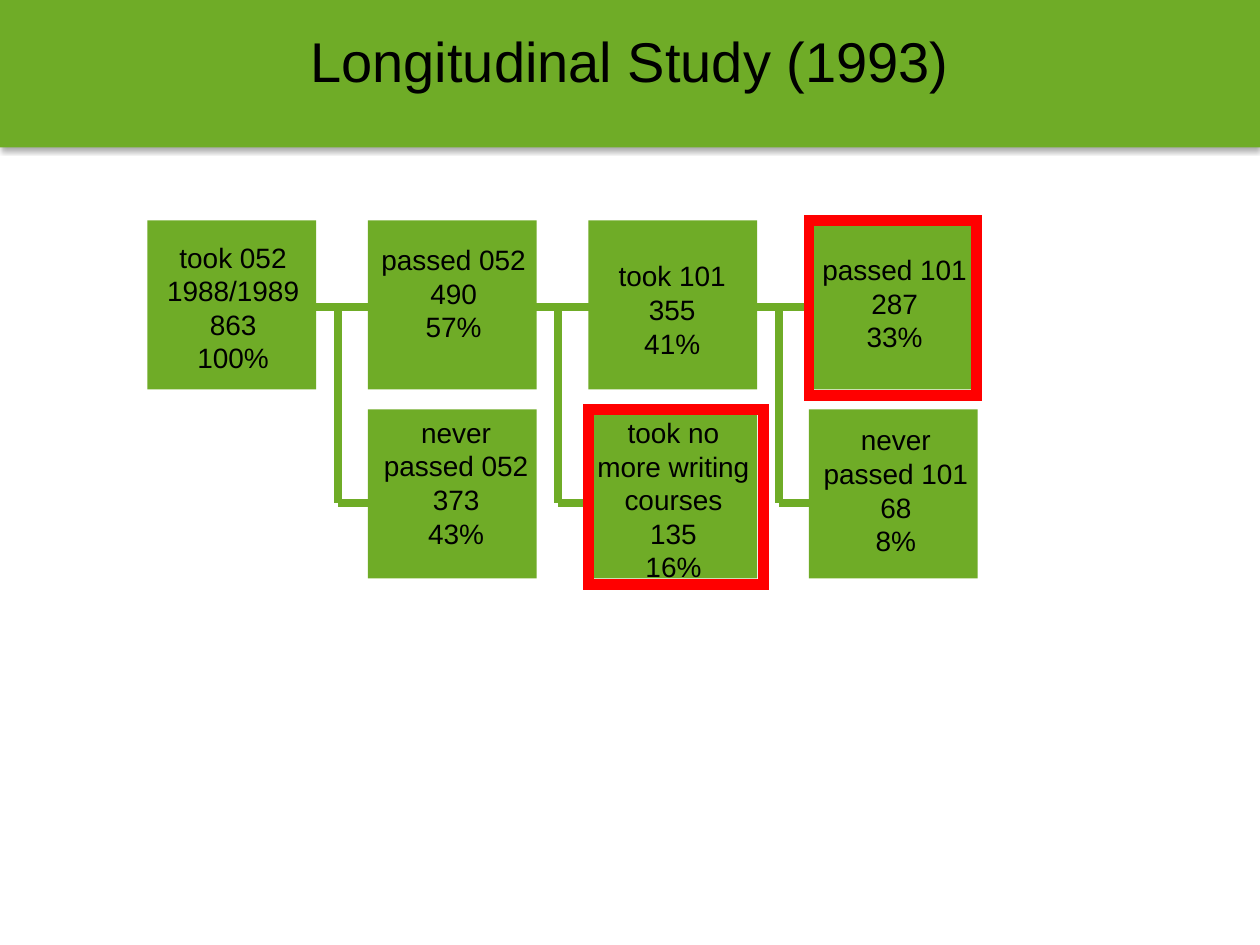
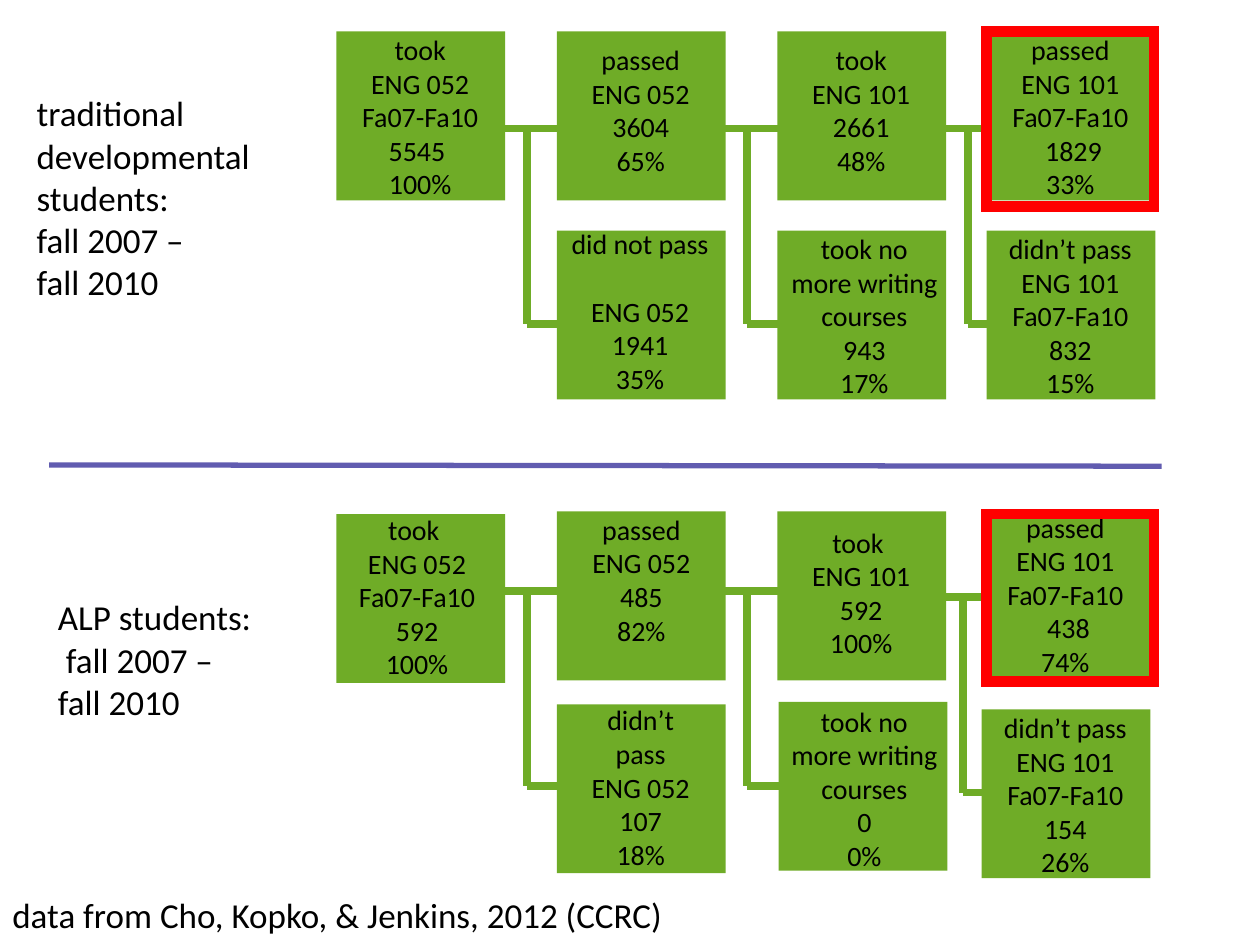
from pptx import Presentation
from pptx.dml.color import RGBColor
from pptx.enum.shapes import MSO_CONNECTOR as Connector, MSO_SHAPE as Shape
from pptx.enum.text import MSO_ANCHOR as Anchor, PP_ALIGN as Align
from pptx.oxml import parse_xml
from pptx.oxml.ns import nsdecls, qn
from pptx.util import Inches, Pt
from lxml.etree import SubElement

COLORS = {"green": "6FAC27", "red": "FF0000", "violet": "615CB0",
          "black": "000000", "white": "FFFFFF"}
BOX_SIDE = 1.34
LINE_HEIGHT = 0.27

# Each stage: box left, box top, label left, label top, label width, lines
STUDY_1993 = [
    (1.17, 1.75, 1.17, 1.86, 1.36, ["took 052", "1988/1989", "863", "100%"]),
    (2.92, 1.75, 2.92, 1.88, 1.36, ["passed 052", "490", "57%"]),
    (2.92, 3.25, 3.00, 3.25, 1.24, ["never", "passed 052", "373", "43%"]),
    (4.67, 1.75, 4.86, 2.01, 0.95, ["took 101", "355", "41%"]),
    (4.67, 3.25, 4.68, 3.25, 1.33,
     ["took no", "more writing", "courses", "135", "16%"]),
    (6.42, 1.75, 6.45, 1.96, 1.30, ["passed 101", "287", "33%"]),
    (6.42, 3.25, 6.49, 3.31, 1.24, ["never", "passed 101", "68", "8%"]),
]
TRADITIONAL = [
    (2.67, 0.25, 2.67, 0.25, 1.33,
     ["took", "ENG 052", "Fa07-Fa10", "5545 ", "100%"]),
    (4.42, 0.25, 4.42, 0.33, 1.33, ["passed", "ENG 052", "3604", "65%"]),
    (4.42, 1.83, 4.42, 1.79, 1.32, ["did not pass", "ENG 052", "1941", "35%"]),
    (6.17, 0.25, 6.17, 0.33, 1.33, ["took", "ENG 101", "2661", "48%"]),
    (6.17, 1.83, 6.25, 1.83, 1.22,
     ["took no", "more writing", "courses", "943", "17%"]),
    (7.83, 0.25, 7.83, 0.25, 1.33,
     ["passed", "ENG 101", "Fa07-Fa10", " 1829", "33%"]),
    (7.83, 1.83, 7.83, 1.83, 1.33,
     ["didn’t pass", "ENG 101", "Fa07-Fa10", "832", "15%"]),
]
ALP = [
    (2.67, 4.08, 2.76, 4.06, 1.10,
     ["took ", "ENG 052", "Fa07-Fa10", "592", "100%"]),
    (4.42, 4.06, 4.63, 4.06, 0.92, ["passed", "ENG 052", "485", "82%"]),
    (4.42, 5.59, 4.42, 5.57, 1.33, ["didn’t", "pass", "ENG 052", "107", "18%"]),
    (6.17, 4.06, 6.17, 4.16, 1.33, ["took ", "ENG 101", "592", "100%"]),
    (6.18, 5.57, 6.25, 5.58, 1.22,
     ["took no", "more writing", "courses", "0", "0%"]),
    (7.79, 4.04, 7.79, 4.04, 1.33,
     ["passed", "ENG 101", "Fa07-Fa10", " 438", "74%"]),
    (7.79, 5.63, 7.79, 5.63, 1.33,
     ["didn’t pass", "ENG 101", "Fa07-Fa10", "154", "26%"]),
]


def color(name):
    return RGBColor.from_string(COLORS[name])


def add_slide(deck):
    slide = deck.slides.add_slide(deck.slide_layouts[6])
    slide.background.fill.solid()
    slide.background.fill.fore_color.rgb = color("white")
    return slide


def add_box(slide, left, top, width=BOX_SIDE, height=BOX_SIDE):
    box = slide.shapes.add_shape(Shape.RECTANGLE, Inches(left), Inches(top),
                                 Inches(width), Inches(height))
    box.shadow.inherit = False
    box.fill.solid()
    box.fill.fore_color.rgb = color("green")
    box.line.fill.background()
    return box


def add_highlight(slide, left, top, width, height):
    """Unfilled red frame with square corners."""
    frame = add_box(slide, left, top, width, height)
    frame.fill.background()
    frame.line.color.rgb = color("red")
    frame.line.width = Pt(6)
    SubElement(frame.line._get_or_add_ln(), qn("a:miter"), lim="800000")


def add_line(slide, start, end, name="green", points=4.5):
    line = slide.shapes.add_connector(Connector.STRAIGHT,
                                      *map(Inches, (*start, *end)))
    line.line.color.rgb = color(name)
    line.line.width = Pt(points)
    SubElement(line._element.spPr, qn("a:effectLst"))


def add_branch(slide, left, top):
    """Link to the next box, with a stem down to the box below it."""
    stem, bottom = left + 0.18, top + 1.57
    add_line(slide, (left, top + 0.02), (left + 0.5, top + 0.02))
    add_line(slide, (stem, top), (stem, bottom))
    add_line(slide, (stem, bottom), (left + 0.58, bottom))


def add_text(slide, at, lines, font, size, align=Align.LEFT, inset=(0.04, 0.04),
             anchor=Anchor.TOP, wrap=True):
    frame = slide.shapes.add_textbox(*map(Inches, at)).text_frame
    frame.word_wrap = wrap
    frame.vertical_anchor = anchor
    frame.margin_left = frame.margin_right = Inches(inset[0])
    frame.margin_top = frame.margin_bottom = Inches(inset[1])
    frame.text = "\n".join(lines)
    for para in frame.paragraphs:
        para.alignment = align
        for span in para.runs:
            span.font.name = font
            span.font.size = Pt(size)
            span.font.color.rgb = color("black")
    return frame


def add_stage(slide, stage, font, inset):
    left, top, label_left, label_top, label_width, lines = stage
    add_box(slide, left, top)
    has_gap = lines[0] == "did not pass"
    height = LINE_HEIGHT * (len(lines) + has_gap) + 2 * inset
    frame = add_text(slide, (label_left, label_top, label_width, height), lines,
                     font, 16, Align.CENTER, (inset, inset), Anchor.MIDDLE, False)
    if has_gap:
        frame.paragraphs[0].space_after = Pt(19.5)


def add_flow(slide, branches, stages, font, inset):
    for left, top in branches:
        add_branch(slide, left, top)
    for stage in stages:
        add_stage(slide, stage, font, inset)


def add_title_band(slide, title):
    band = add_box(slide, 0, 0, 10, 1.17)
    properties = band._element.spPr
    properties.remove(properties.find(qn("a:effectLst")))
    properties.append(parse_xml(
        f'<a:effectLst {nsdecls("a")}><a:outerShdw blurRad="{Pt(3.1)}" '
        f'dist="{Pt(1.8)}" dir="5400000" rotWithShape="0">'
        f'<a:srgbClr val="{COLORS["black"]}"><a:alpha val="35000"/></a:srgbClr>'
        '</a:outerShdw></a:effectLst>'))
    add_text(slide, (0, 0.17, 10, 0.67), [title], "Arial", 32, Align.CENTER)


def build_1993_study(deck):
    slide = add_slide(deck)
    add_flow(slide, [(2.5 + 1.75 * i, 2.42) for i in range(3)],
             STUDY_1993, "Arial", 0.04)
    add_highlight(slide, 4.67, 3.25, 1.39, 1.39)
    add_highlight(slide, 6.42, 1.75, 1.33, 1.39)
    add_title_band(slide, "Longitudinal Study (1993)")


def build_alp_comparison(deck):
    slide = add_slide(deck)
    add_flow(slide, [(4, 1), (5.75, 1), (7.5, 1)], TRADITIONAL, "Calibri", 0)
    add_flow(slide, [(4, 4.67), (5.75, 4.67), (7.46, 4.72)], ALP, "Calibri", 0)
    add_line(slide, (0.39, 3.69), (9.22, 3.7), "violet", 3)
    add_text(slide, (0.25, 0.69, 2.25, 2.97),
             ["traditional developmental students:", "fall 2007 –", "fall 2010"],
             "Calibri", 20)
    add_text(slide, (0.42, 4.69, 2.17, 2.64),
             ["ALP students:", " fall 2007 –", "fall 2010"], "Calibri", 20)
    add_text(slide, (0, 7.04, 10, 0.44),
             ["data from Cho, Kopko, & Jenkins, 2012 (CCRC)"],
             "Calibri", 20, inset=(0.1, 0.05))
    add_highlight(slide, 7.83, 4.08, 1.33, 1.33)
    add_highlight(slide, 7.83, 0.25, 1.33, 1.39)


def main():
    deck = Presentation()
    deck.slide_width, deck.slide_height = Inches(10), Inches(7.5)
    build_1993_study(deck)
    build_alp_comparison(deck)
    deck.save("out.pptx")


if __name__ == "__main__":
    main()
